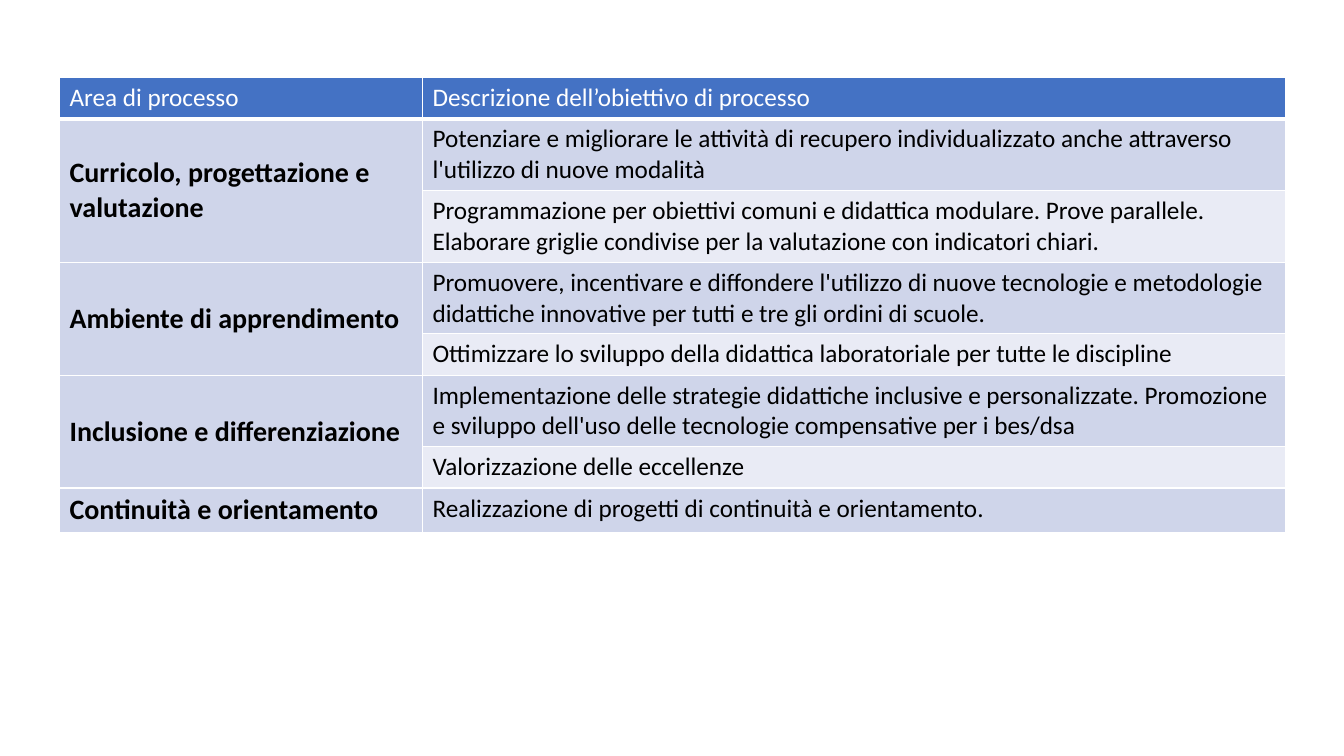
from lxml.etree import SubElement
from pptx import Presentation
from pptx.dml.color import RGBColor
from pptx.enum.text import MSO_ANCHOR as Anchor
from pptx.oxml.ns import qn
from pptx.util import Inches, Pt

SLIDE_W, SLIDE_H = Inches(13.33), Inches(7.5)
FONT = "Calibri"
WHITE, BLACK = "FFFFFF", "000000"
HEADER_BLUE, BAND_DARK, BAND_LIGHT = "4472C4", "CFD5EA", "E9EBF5"
COLUMN_WIDTHS = (3.6, 8.56)
ROW_HEIGHT = 0.41
HEADINGS = ("Area di processo", "Descrizione dell’obiettivo di processo")
AREAS = [
    ("Curricolo, progettazione e valutazione", [
        ["Potenziare e migliorare le attività di recupero individualizzato anche attraverso",
         "l'utilizzo di nuove modalità"],
        ["Programmazione per obiettivi comuni e didattica modulare. Prove parallele. "
         "Elaborare griglie condivise per la valutazione con indicatori chiari."],
    ]),
    ("Ambiente di apprendimento", [
        ["Promuovere, incentivare e diffondere l'utilizzo di nuove tecnologie e metodologie "
         "didattiche innovative per tutti e tre gli ordini di scuole."],
        ["Ottimizzare lo sviluppo della didattica laboratoriale per tutte le discipline"],
    ]),
    ("Inclusione e differenziazione", [
        ["Implementazione delle strategie didattiche inclusive e personalizzate. Promozione "
         "e sviluppo dell'uso delle tecnologie compensative per i bes/dsa"],
        ["Valorizzazione delle eccellenze"],
    ]),
    ("Continuità e orientamento", [
        ["Realizzazione di progetti di continuità e orientamento."],
    ]),
]


def color(hex_value):
    return RGBColor.from_string(hex_value)


def paint(cell, hex_value):
    cell.fill.solid()
    cell.fill.fore_color.rgb = color(hex_value)


def write(cell, paragraphs, size=18, ink=BLACK, bold=False):
    frame = cell.text_frame
    for index, wording in enumerate(paragraphs):
        paragraph = frame.add_paragraph() if index else frame.paragraphs[0]
        run = paragraph.add_run()
        run.text = wording
        run.font.name = FONT
        run.font.size = Pt(size)
        run.font.bold = bold
        run.font.color.rgb = color(ink)


def outline(cell, **widths):
    properties = cell._tc.get_or_add_tcPr()
    for side, width in widths.items():
        line = SubElement(properties, qn(f"a:ln{side}"), w=str(Pt(width)))
        ink = SubElement(line, qn("a:solidFill"))
        SubElement(ink, qn("a:srgbClr"), val=WHITE)


def add_header(table):
    for cell, heading in zip(table.rows[0].cells, HEADINGS):
        outline(cell, L=1, R=1, T=1, B=3)
        paint(cell, HEADER_BLUE)
        write(cell, [heading], ink=WHITE)


def add_area(table, first_row, area, goals):
    for offset, goal in enumerate(goals):
        paint(table.cell(first_row + offset, 0), BAND_DARK)
        goal_cell = table.cell(first_row + offset, 1)
        paint(goal_cell, BAND_LIGHT if offset % 2 else BAND_DARK)
        write(goal_cell, goal)
    area_cell = table.cell(first_row, 0)
    if len(goals) > 1:
        area_cell.merge(table.cell(first_row + len(goals) - 1, 0))
    area_cell.vertical_anchor = Anchor.MIDDLE
    write(area_cell, [area], size=20, bold=True)


def add_goal_table(slide):
    row_count = 1 + sum(len(goals) for _, goals in AREAS)
    height = Inches(4.45)
    holder = slide.shapes.add_table(
        row_count, len(COLUMN_WIDTHS), Inches(0.59), Inches(0.77),
        Inches(sum(COLUMN_WIDTHS)), height)
    table = holder.table
    for column, width in zip(table.columns, COLUMN_WIDTHS):
        column.width = Inches(width)
    for row in table.rows:
        row.height = Inches(ROW_HEIGHT)
    holder.height = height
    add_header(table)
    next_row = 1
    for area, goals in AREAS:
        add_area(table, next_row, area, goals)
        next_row += len(goals)


def main():
    deck = Presentation()
    deck.slide_width, deck.slide_height = SLIDE_W, SLIDE_H
    slide = deck.slides.add_slide(deck.slide_layouts[6])
    add_goal_table(slide)
    deck.save("out.pptx")


if __name__ == "__main__":
    main()
